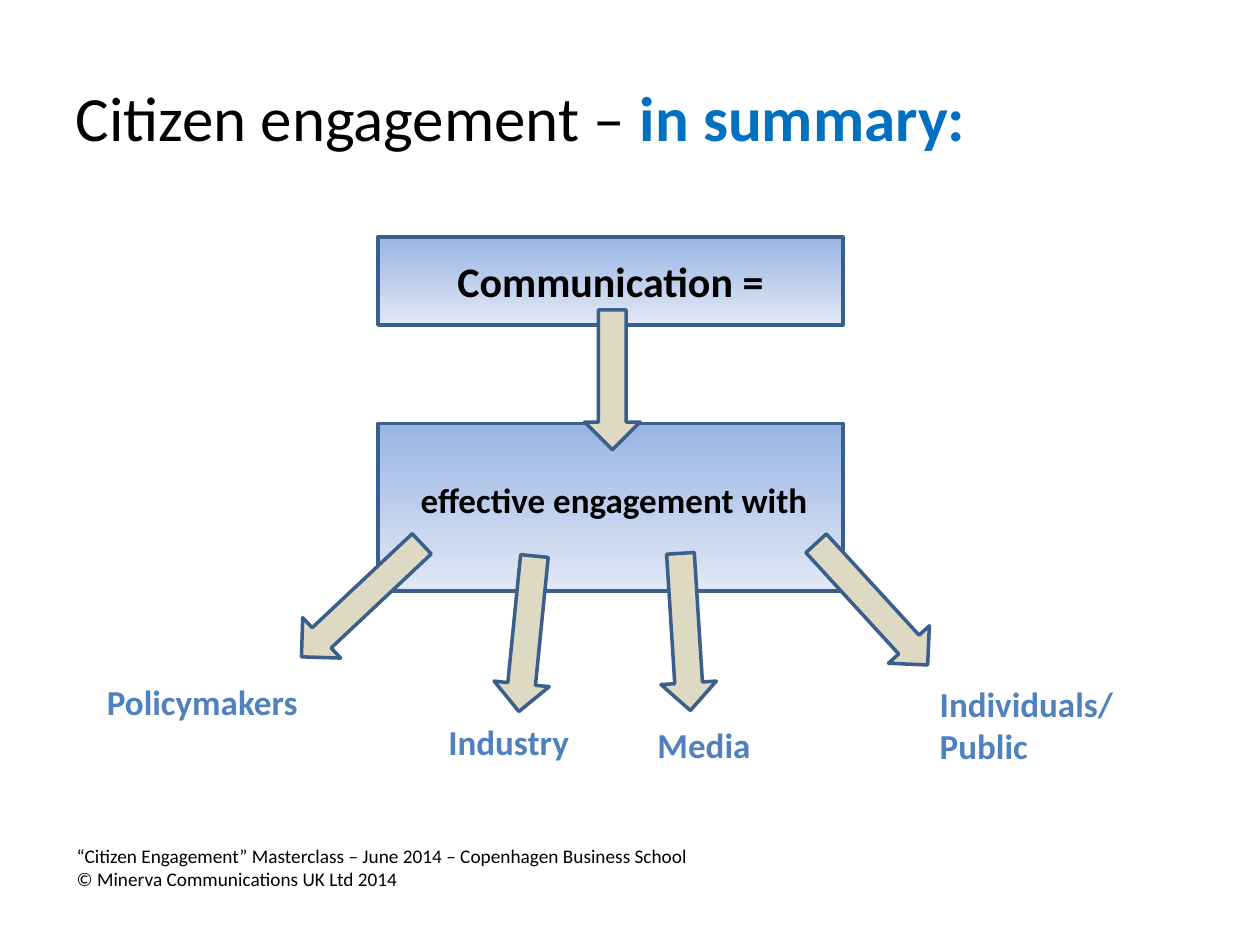
"""Build the citizen engagement summary slide."""
import pptx
import pptx.dml.color
import pptx.enum.shapes
import pptx.enum.text
import pptx.util

Inches = pptx.util.Inches
RGBColor = pptx.dml.color.RGBColor
SHAPE = pptx.enum.shapes.MSO_SHAPE
ALIGN = pptx.enum.text.PP_ALIGN

BLACK = RGBColor(0x00, 0x00, 0x00)
ACCENT = RGBColor(0x00, 0x70, 0xC0)
LABEL = RGBColor(0x4F, 0x81, 0xBD)
OUTLINE = RGBColor(0x3A, 0x5F, 0x8C)
ARROW = RGBColor(0xDD, 0xD9, 0xC3)
BOX_TOP = RGBColor(0x9A, 0xB5, 0xE4)
BOX_BOTTOM = RGBColor(0xE1, 0xE8, 0xF5)


def add_run(p, text, size, color, bold=False):
    r = p.add_run()
    r.text = text
    r.font.name = "Calibri"
    r.font.size = pptx.util.Pt(size)
    r.font.bold = bold
    r.font.color.rgb = color


def add_outlined(kind, left, top, width, height):
    sp = s.shapes.add_shape(kind, Inches(left), Inches(top), Inches(width), Inches(height))
    sp.shadow.inherit = False
    sp.line.color.rgb = OUTLINE
    sp.line.width = pptx.util.Pt(2)
    return sp


prs = pptx.Presentation()
prs.slide_width = Inches(10)
prs.slide_height = Inches(7.5)
s = prs.slides.add_slide(prs.slide_layouts[5])

title = s.shapes.title
title.left, title.top = Inches(0.5), Inches(0.3)
title.width, title.height = Inches(9), Inches(1.25)
title.text_frame.vertical_anchor = pptx.enum.text.MSO_ANCHOR.MIDDLE
p = title.text_frame.paragraphs[0]
p.alignment = ALIGN.LEFT
add_run(p, "Citizen engagement – ", 36, BLACK)
add_run(p, "in summary:", 36, ACCENT, True)

for top, height in [(1.88, 0.7), (3.36, 1.33)]:
    sp = add_outlined(SHAPE.RECTANGLE, 3, top, 3.69, height)
    sp.fill.gradient()
    sp.fill.gradient_angle = 270
    for stop, color in zip(sp.fill.gradient_stops, (BOX_TOP, BOX_BOTTOM)):
        stop.color.rgb = color

texts = [
    (["effective engagement with"], 3.24, 3.75, 3.32, 0.44, 20, BLACK, True, ALIGN.LEFT),
    (["Communication ="], 3.24, 1.98, 3.21, 0.5, 24, BLACK, True, ALIGN.CENTER),
    (["Policymakers"], 0.75, 5.35, 1.8, 0.44, 20, LABEL, True, ALIGN.LEFT),
    (["Industry"], 3.46, 5.67, 1.23, 0.44, 20, LABEL, True, ALIGN.LEFT),
    (["Media"], 5.12, 5.69, 0.96, 0.44, 20, LABEL, True, ALIGN.LEFT),
    (["Individuals/Public"], 7.36, 5.37, 1.66, 0.77, 20, LABEL, True, ALIGN.LEFT),
    (["“Citizen Engagement” Masterclass – June 2014 – Copenhagen Business School",
      "© Minerva Communications UK Ltd 2014"],
     0.51, 6.65, 5.67, 0.47, 11, BLACK, False, ALIGN.LEFT),
]
for lines, left, top, width, height, size, color, bold, align in texts:
    tb = s.shapes.add_textbox(Inches(left), Inches(top), Inches(width), Inches(height))
    tf = tb.text_frame
    tf.word_wrap = True
    p = tf.paragraphs[0]
    p.alignment = align
    for i, line in enumerate(lines):
        if i:
            p.add_line_break()
        add_run(p, line, size, color, bold)

arrows = [
    (4.64, 2.46, 1.11, 0),
    (6.7, 4.14, 1.31, 317.5),
    (2.65, 4.11, 1.31, 46.8),
    (5.22, 4.39, 1.25, 356.4),
    (3.96, 4.41, 1.24, 5.7),
]
for left, top, length, angle in arrows:
    sp = add_outlined(SHAPE.DOWN_ARROW, left, top, 0.44, length)
    sp.rotation = angle
    sp.fill.solid()
    sp.fill.fore_color.rgb = ARROW

prs.save("out.pptx")
